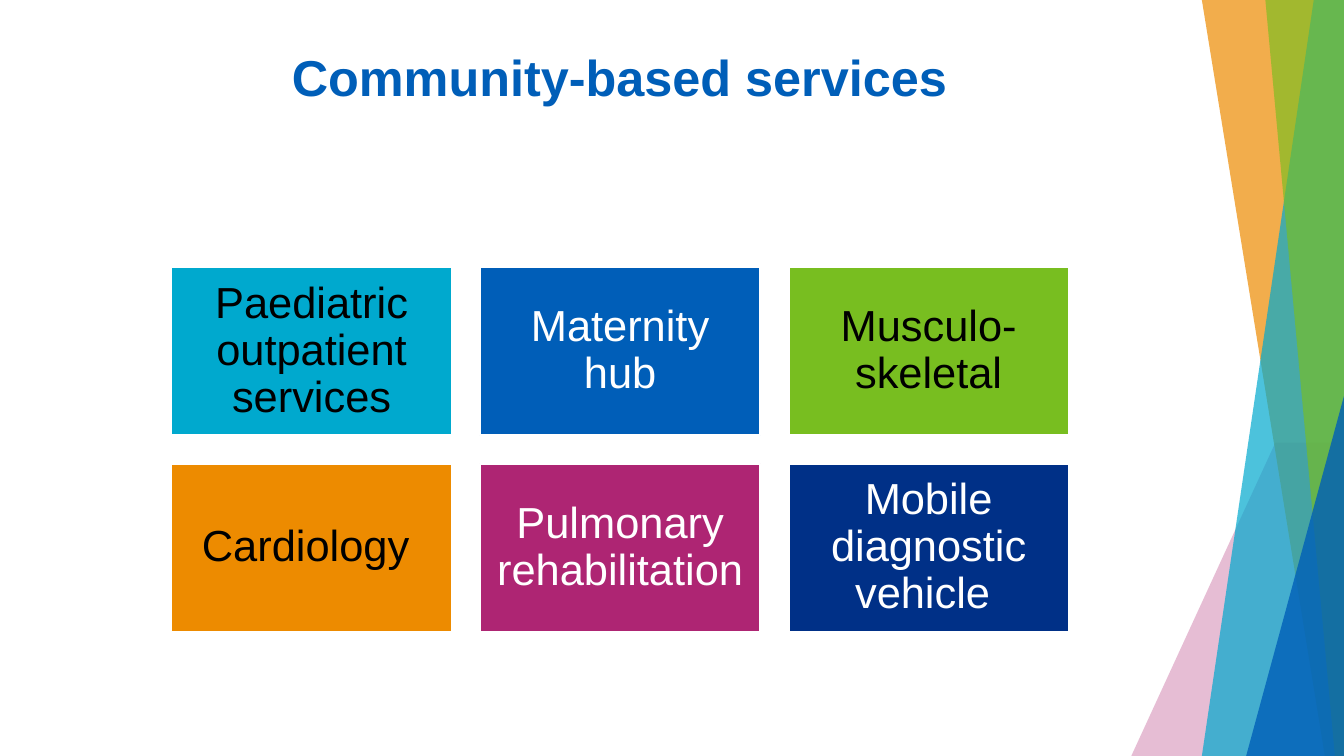
"""Build the community-based services slide with six coloured service tiles."""
from lxml import etree
from pptx import Presentation
from pptx.dml.color import RGBColor
from pptx.enum.shapes import MSO_SHAPE
from pptx.enum.text import MSO_ANCHOR, PP_ALIGN
from pptx.oxml.ns import qn
from pptx.util import Inches, Pt

RECTANGLE, TRIANGLE = MSO_SHAPE.RECTANGLE, MSO_SHAPE.ISOSCELES_TRIANGLE
MIDDLE, CENTER = MSO_ANCHOR.MIDDLE, PP_ALIGN.CENTER

COLORS = {
    "cyan": "00A9CE", "blue": "005EB8", "green": "78BE20", "orange": "ED8B00",
    "plum": "AE2573", "navy": "003087", "white": "FFFFFF", "black": "000000",
}
FONT = "Arial"
SLIDE_WIDTH, SLIDE_HEIGHT = 13.33, 7.5

TITLE = "Community-based services"
TITLE_BOX = (0.74, 0.35, 10.81, 0.81)
SERVICES = [
    ("Paediatric outpatient services", "cyan", "black"),
    ("Maternity hub", "blue", "white"),
    ("Musculo-skeletal", "green", "black"),
    ("Cardiology ", "orange", "black"),
    ("Pulmonary rehabilitation ", "plum", "white"),
    ("Mobile diagnostic vehicle ", "navy", "white"),
]
COLUMNS = 3
GRID_LEFT, GRID_TOP = 1.7, 2.65
TILE_WIDTH, TILE_HEIGHT, TILE_GAP = 2.78, 1.67, 0.28
TILE_INSET = 0.13

RIBBONS = [
    ("plum", 30, 12.65, 4.39, 11.22),
    ("orange", 70, 11.92, 0, 13.14),
    ("cyan", 70, 13.03, 0, 11.92),
    ("green", 65, 12.55, 0, 13.24),
]
CORNER_BOX = (12.36, 3.93, 0.97, 3.57)


def color(name):
    return RGBColor.from_string(COLORS[name])


def fill_shape(shape, name, opacity=100):
    shape.shadow.inherit = False
    shape.fill.solid()
    shape.fill.fore_color.rgb = color(name)
    shape.line.fill.background()
    if opacity < 100:
        fill_color = shape.element.spPr.find(qn("a:solidFill"))[0]
        etree.SubElement(fill_color, qn("a:alpha"), val=str(opacity * 1000))


def write_text(shape, text, size, color_name, bold=False):
    frame = shape.text_frame
    frame.text = text
    frame.word_wrap = True
    frame.vertical_anchor = MIDDLE
    paragraph = frame.paragraphs[0]
    paragraph.alignment = CENTER
    font = paragraph.runs[0].font
    font.name, font.size, font.bold = FONT, Pt(size), bold
    font.color.rgb = color(color_name)
    return frame


def add_ribbons(slide):
    for name, opacity, top_left, top, bottom_left in RIBBONS:
        corners = [(top_left, top), (SLIDE_WIDTH, top),
                   (SLIDE_WIDTH, SLIDE_HEIGHT), (bottom_left, SLIDE_HEIGHT)]
        points = [(Inches(x), Inches(y)) for x, y in corners]
        builder = slide.shapes.build_freeform(*points[0])
        builder.add_line_segments(points[1:], close=True)
        fill_shape(builder.convert_to_shape(), name, opacity)
    corner = slide.shapes.add_shape(TRIANGLE, *map(Inches, CORNER_BOX))
    corner.adjustments[0] = 1
    fill_shape(corner, "blue", 80)


def add_title(slide):
    title = slide.shapes.title
    title.left, title.top, title.width, title.height = map(Inches, TITLE_BOX)
    write_text(title, TITLE, 36, "blue", bold=True)


def add_tiles(slide):
    for index, (service, fill_name, text_name) in enumerate(SERVICES):
        row, column = divmod(index, COLUMNS)
        left = GRID_LEFT + column * (TILE_WIDTH + TILE_GAP)
        top = GRID_TOP + row * (TILE_HEIGHT + TILE_GAP)
        box = (left, top, TILE_WIDTH, TILE_HEIGHT)
        tile = slide.shapes.add_shape(RECTANGLE, *map(Inches, box))
        fill_shape(tile, fill_name)
        tile.line.color.rgb = color("white")
        tile.line.width = Pt(1.5)
        frame = write_text(tile, service, 31, text_name)
        frame.margin_left = frame.margin_right = Inches(TILE_INSET)
        frame.margin_top = frame.margin_bottom = Inches(TILE_INSET)
        frame.paragraphs[0].line_spacing = 0.9


def main():
    presentation = Presentation()
    presentation.slide_width = Inches(SLIDE_WIDTH)
    presentation.slide_height = Inches(SLIDE_HEIGHT)
    slide = presentation.slides.add_slide(presentation.slide_layouts[5])
    add_ribbons(slide)
    add_title(slide)
    add_tiles(slide)
    presentation.save("out.pptx")


if __name__ == "__main__":
    main()
